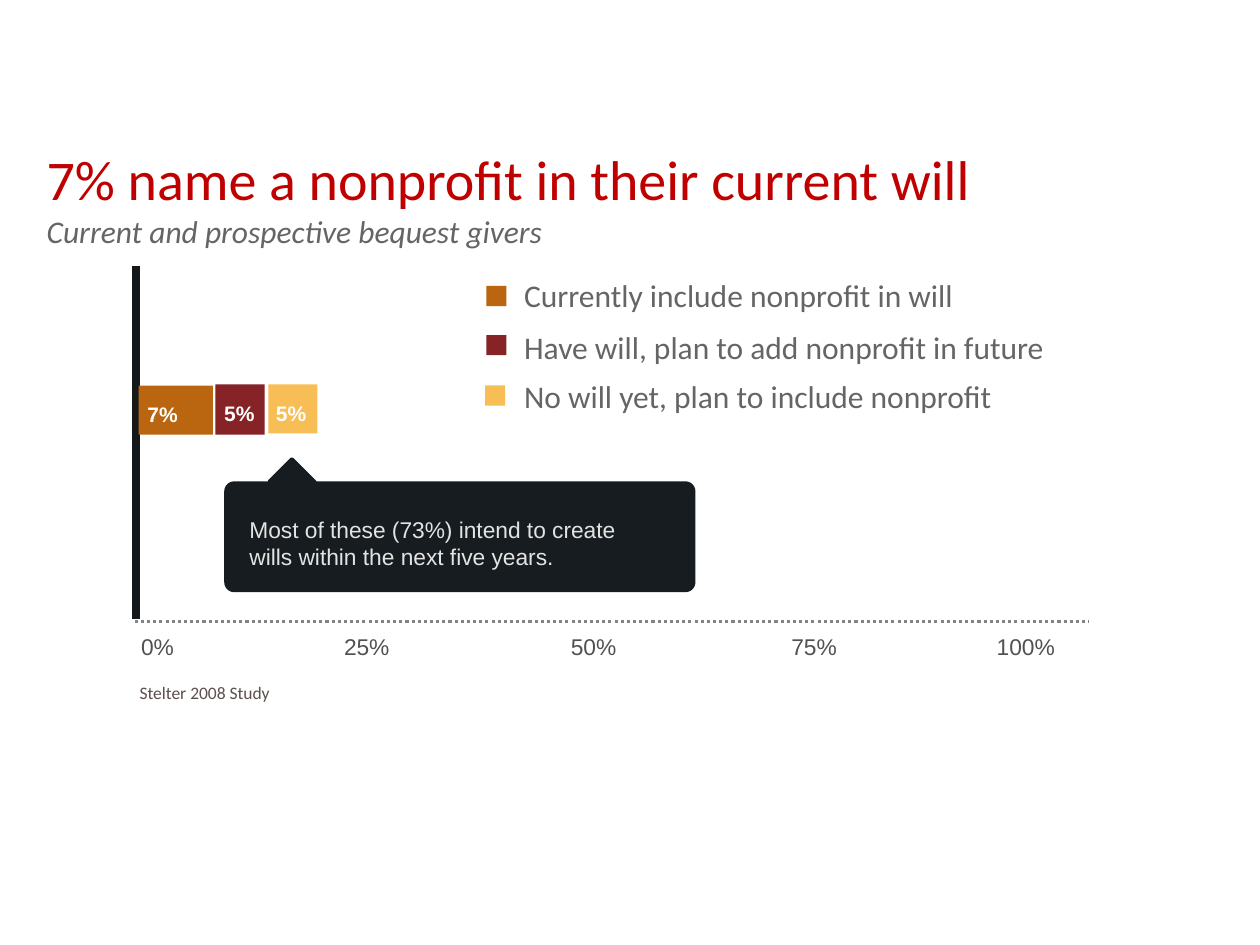
from dataclasses import dataclass

from pptx import Presentation
from pptx.dml.color import RGBColor
from pptx.enum import dml, shapes, text
from pptx.oxml import parse_xml
from pptx.oxml.ns import nsdecls
from pptx.util import Inches, Pt


@dataclass(frozen=True)
class Theme:
    head: str = "C00000"
    gray: str = "656565"
    tick: str = "515151"
    dots: str = "848484"
    note: str = "161C1F"
    pale: str = "E3E3E3"
    axis: str = "14181A"
    cite: str = "5D4F4B"
    white: str = "FFFFFF"
    sans: str = "Calibri"
    grid: str = "Arial"
    title: int = 32
    body: int = 18
    small: int = 13
    value: int = 12
    source: int = 10


T = Theme()

# legend text, value, colour, legend top, legend width, key box, bar box, value box
SERIES = [
    ("Currently include nonprofit in will", "7%", "BA6510", 2.13, 4.98,
     (3.86, 2.27), (1.1, 3.06, 0.59, 0.39), (1.11, 3.13, 0.58, 0.29)),
    ("Have will, plan to add nonprofit in future", "5%", "852327", 2.54, 5.3,
     (3.86, 2.66), (1.71, 3.05, 0.39, 0.4), (1.72, 3.12, 0.37, 0.3)),
    ("No will yet, plan to include nonprofit", "5%", "F8BE56", 2.93, 4.04,
     (3.85, 3.06), (2.13, 3.05, 0.39, 0.39), (2.13, 3.12, 0.4, 0.3)),
]
TICKS = [("0%", 1.08, 0.6), ("25%", 2.69, 0.75), ("50%", 4.49, 0.75),
         ("75%", 6.24, 0.75), ("100%", 7.87, 0.75)]


def style(para, font, size, color, bold=False, italic=False):
    for run in para.runs:
        run.font.name = font
        run.font.size = Pt(size)
        run.font.bold = bold
        run.font.italic = italic
        run.font.color.rgb = RGBColor.from_string(color)


def fit(frame, pad):
    """Set equal insets, wrapping and top anchoring."""
    frame.word_wrap = True
    frame.auto_size = text.MSO_AUTO_SIZE.NONE
    frame.vertical_anchor = text.MSO_ANCHOR.TOP
    frame.margin_left = frame.margin_right = Inches(pad)
    frame.margin_top = frame.margin_bottom = Inches(pad)


def label(parent, words, box, pad, font, size, color, bold=False):
    frame = parent.add_textbox(*map(Inches, box)).text_frame
    fit(frame, pad)
    frame.text = words
    style(frame.paragraphs[0], font, size, color, bold)
    return frame


def block(parent, box, color, round_by=None):
    kind = shapes.MSO_SHAPE.RECTANGLE
    if round_by is not None:
        kind = shapes.MSO_SHAPE.ROUNDED_RECTANGLE
    shape = parent.add_shape(kind, *map(Inches, box))
    if round_by is not None:
        shape.adjustments[0] = round_by
    shape.shadow.inherit = False
    shape.fill.solid()
    shape.fill.fore_color.rgb = RGBColor.from_string(color)
    shape.line.fill.background()
    return shape


def rule(parent, ends, color, width, dash=None):
    line = parent.add_connector(shapes.MSO_CONNECTOR.STRAIGHT, *map(Inches, ends))
    line.line.color.rgb = RGBColor.from_string(color)
    line.line.width = Pt(width)
    if dash is not None:
        line.line.dash_style = dash
    line._element.spPr.append(parse_xml(f"<a:effectLst {nsdecls('a')}/>"))


def heading(slide):
    title = slide.shapes.title
    title.left, title.top = Inches(0.33), Inches(1.11)
    title.width, title.height = Inches(9), Inches(0.88)
    frame = title.text_frame
    fit(frame, 0.04)
    frame.text = ("7% name a nonprofit in their current will\n"
                  "Current and prospective bequest givers")
    main_line, sub_line = frame.paragraphs
    main_line.alignment = sub_line.alignment = text.PP_ALIGN.LEFT
    style(main_line, T.sans, T.title, T.head)
    style(sub_line, T.sans, T.body, T.gray, italic=True)


def axes(slide):
    for words, left, width in TICKS:
        label(slide.shapes, words, (left, 4.98, width, 0.31), 0.04,
              T.grid, T.small, T.tick)
    rule(slide.shapes, (1.08, 2.11, 1.08, 4.91), T.axis, 4.25)
    rule(slide.shapes, (1.07, 4.93, 8.64, 4.93), T.dots, 1.75,
         dml.MSO_LINE.ROUND_DOT)


def callout(slide):
    parts = slide.shapes.add_group_shape().shapes
    block(parts, (2.18, 3.68, 0.28, 0.29), T.note, 0.06).rotation = 315
    block(parts, (1.78, 3.82, 3.74, 0.88), T.note, 0.09)
    label(parts, "Most of these (73%) intend to create wills within the next five years.",
          (1.78, 3.89, 3.53, 0.79), 0.2, T.grid, T.small, T.pale)


def series(slide, name, value, color, top, width, key, bar, spot):
    """Draw one bar segment with its value and legend entry."""
    parts = slide.shapes.add_group_shape().shapes
    label(parts, name, (4.1, top, width, 0.38), 0.06, T.sans, T.body, T.gray)
    block(parts, (*key, 0.16, 0.16), color)
    block(parts, bar, color)
    label(parts, value, spot, 0.06, T.grid, T.value, T.white, bold=True)


def source(slide):
    frame = label(slide.shapes, "Stelter 2008 Study", (1.01, 5.36, 3.93, 0.27),
                  0.05, T.sans, T.source, T.cite)
    frame.margin_left = frame.margin_right = Inches(0.1)
    frame.auto_size = text.MSO_AUTO_SIZE.SHAPE_TO_FIT_TEXT


def main():
    deck = Presentation()
    deck.slide_width, deck.slide_height = Inches(10), Inches(7.5)
    slide = deck.slides.add_slide(deck.slide_layouts.get_by_name("Title Only"))
    heading(slide)
    axes(slide)
    callout(slide)
    for row in SERIES:
        series(slide, *row)
    source(slide)
    deck.save("out.pptx")


if __name__ == "__main__":
    main()
